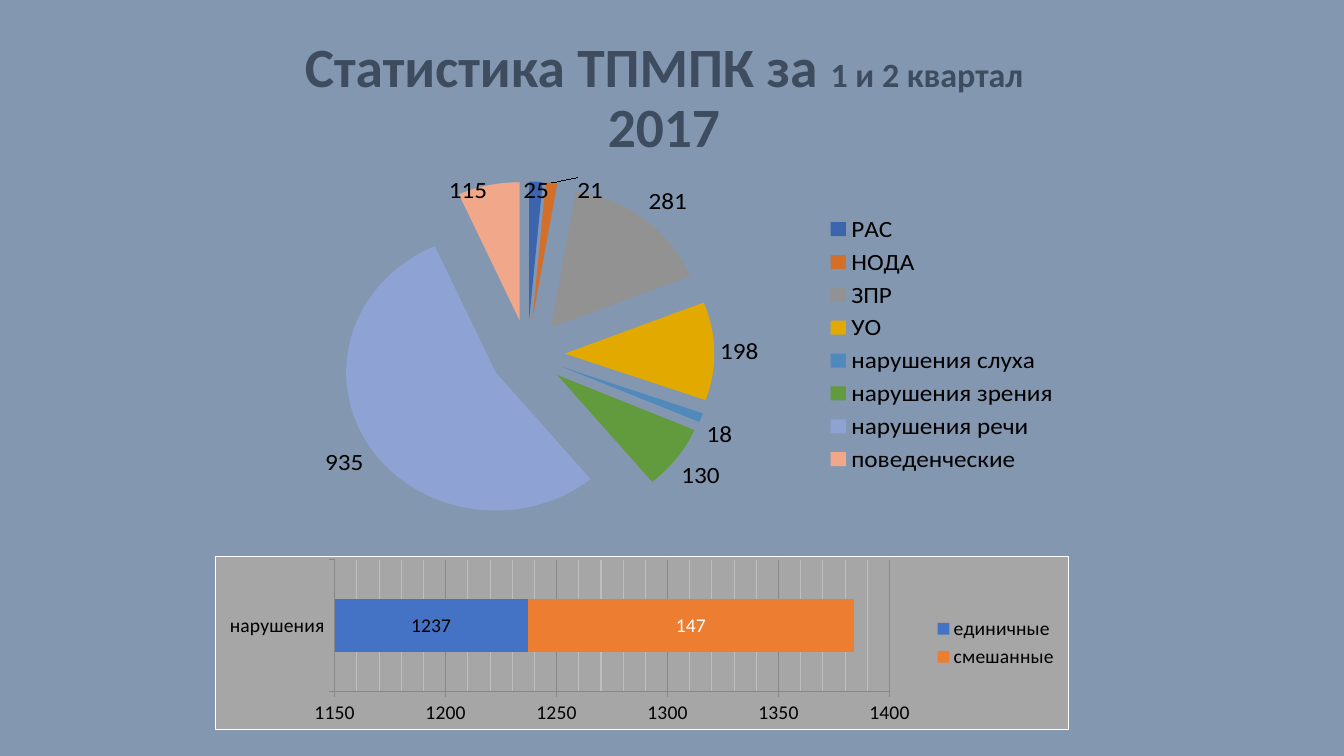
from lxml.etree import SubElement
from pptx import Presentation
from pptx.chart.data import CategoryChartData
from pptx.dml.color import RGBColor
from pptx.enum.chart import XL_CHART_TYPE as ChartType
from pptx.enum.chart import XL_LABEL_POSITION as LabelPosition
from pptx.enum.chart import XL_LEGEND_POSITION as LegendPosition
from pptx.enum.chart import XL_TICK_MARK as TickMark
from pptx.enum.text import MSO_ANCHOR as Anchor
from pptx.enum.text import PP_ALIGN as Align
from pptx.oxml.ns import qn
from pptx.util import Cm, Pt

FONT = "Calibri"
DISORDERS = [
    ("РАС", 25, "3C65AE"),
    ("НОДА", 21, "D16F2B"),
    ("ЗПР", 281, "929292"),
    ("УО", 198, "E2AA00"),
    ("нарушения слуха", 18, "5089BC"),
    ("нарушения зрения", 130, "629A3E"),
    ("нарушения речи", 935, "8FA2D4"),
    ("поведенческие", 115, "F1A78A"),
]
# Name, value, bar colour, label colour
GROUPS = [
    ("единичные", 1237, "4472C4", "000000"),
    ("смешанные", 147, "ED7D31", "FFFFFF"),
]


def paint(target, color):
    """Fill a fill format with a solid hex colour."""
    target.solid()
    target.fore_color.rgb = RGBColor.from_string(color)


def style_font(font, size, color="000000", bold=False):
    font.name, font.size, font.bold = FONT, Pt(size), bold
    font.color.rgb = RGBColor.from_string(color)


def style_line(line, color):
    line.color.rgb = RGBColor.from_string(color)
    line.width = Pt(0.75)


def add_solid_fill(parent, color):
    solid = SubElement(parent, qn("a:solidFill"))
    SubElement(solid, qn("a:srgbClr"), val=color)


def add_outline(parent, color):
    line = SubElement(parent, qn("a:ln"), w=str(Pt(0.75)))
    add_solid_fill(line, color)


def add_layout(parent, index, **fractions):
    """Place a chart part by fractions of the chart area."""
    for old in parent.findall(qn("c:layout")):
        parent.remove(old)
    layout = SubElement(parent, qn("c:layout"))
    manual = SubElement(layout, qn("c:manualLayout"))
    for name, value in fractions.items():
        SubElement(manual, qn(f"c:{name}")).set("val", str(value))
    parent.insert(index, layout)


def place_plot(chart, x, y, w, h):
    area = chart.plots[0]._element.getparent()
    add_layout(area, 0, layoutTarget="inner", xMode="edge", yMode="edge",
               x=x, y=y, w=w, h=h)


def add_title(page, pieces):
    box = page.shapes.add_textbox(Cm(5.94), Cm(0.91), Cm(21.59), Cm(3.18))
    frame = box.text_frame
    frame.word_wrap = True
    frame.vertical_anchor = Anchor.MIDDLE
    frame.margin_left = frame.margin_right = Cm(0.35)
    para = frame.paragraphs[0]
    para.alignment, para.line_spacing = Align.CENTER, 0.9
    for text, size in pieces:
        span = para.add_run()
        span.text = text
        style_font(span.font, size, "3D4C5F", bold=True)


def add_chart(page, kind, place, categories, series, legend_size):
    data = CategoryChartData()
    data.categories = categories
    for name, values in series:
        data.add_series(name, values)
    lengths = [Cm(length) for length in place]
    chart = page.shapes.add_chart(kind, *lengths, data).chart
    chart.has_title = False
    style_font(chart.font, 18)
    chart.has_legend = True
    chart.legend.position = LegendPosition.RIGHT
    chart.legend.include_in_layout = False
    style_font(chart.legend.font, legend_size)
    return chart


def add_disorder_pie(page):
    names, values, colors = zip(*DISORDERS)
    chart = add_chart(page, ChartType.PIE, (5.94, 3.73, 21.01, 9.19),
                      names, [("Series 1", values)], 18)
    place_plot(chart, 0.17, 0.12, 0.36, 0.82)
    plot = chart.plots[0]
    plot.vary_by_categories = True
    series = plot.series[0]

    # Exploded slices
    for index, color in enumerate(colors):
        paint(series.points[index].format.fill, color)
    for slice_xml in series._element.findall(qn("c:dPt")):
        explosion = SubElement(slice_xml, qn("c:explosion"))
        explosion.set("val", "25")
        slice_xml.find(qn("c:spPr")).addprevious(explosion)

    # Value labels, with the second one moved clear of its neighbour
    labels = series.data_labels
    labels.show_value = True
    labels.position = LabelPosition.OUTSIDE_END
    style_font(labels.font, 18)
    series.points[1].data_label.position = LabelPosition.OUTSIDE_END
    label_xml = series._element.find(qn("c:dLbls")).find(qn("c:dLbl"))
    add_layout(label_xml, 1, x=0.03, y=0)


def style_axis(axis):
    axis.major_tick_mark = TickMark.OUTSIDE
    style_font(axis.tick_labels.font, 14)
    style_line(axis.format.line, "878787")


def frame_chart(chart, fill, border):
    """Give the whole chart area a fill and a thin border."""
    area = SubElement(chart._chartSpace, qn("c:spPr"))
    chart._chartSpace.find(qn("c:chart")).addnext(area)
    add_solid_fill(area, fill)
    add_outline(area, border)


def add_group_bar(page):
    chart = add_chart(page, ChartType.BAR_STACKED, (5.41, 14, 21.54, 4.39),
                      ["нарушения"],
                      [(name, [value]) for name, value, *_ in GROUPS], 14)
    place_plot(chart, 0.14, 0.02, 0.65, 0.76)
    frame_chart(chart, "A6A6A6", "FFFFFF")

    # Axes and gridlines
    style_axis(chart.category_axis)
    axis = chart.value_axis
    style_axis(axis)
    axis.minimum_scale, axis.maximum_scale = 1150, 1400
    axis.major_unit, axis.minor_unit = 50, 10
    axis.has_major_gridlines = axis.has_minor_gridlines = True
    style_line(axis.major_gridlines.format.line, "878787")
    minor_grid = axis._element.find(qn("c:minorGridlines"))
    add_outline(SubElement(minor_grid, qn("c:spPr")), "BEBEBE")

    # Stacked bars
    plot = chart.plots[0]
    plot.vary_by_categories = False
    plot.gap_width, plot.overlap = 150, 100
    for series, (_, _, color, label_color) in zip(plot.series, GROUPS):
        paint(series.format.fill, color)
        series.data_labels.show_value = True
        style_font(series.data_labels.font, 14, label_color)


def main():
    deck = Presentation()
    deck.slide_width, deck.slide_height = Cm(33.87), Cm(19.05)
    page = deck.slides.add_slide(deck.slide_layouts[6])
    paint(page.background.fill, "8497B0")
    add_title(page, [("Статистика ТПМПК за ", 39.6),
                     ("1 и 2 квартал ", 24.3),
                     ("2017", 39.6)])
    add_disorder_pie(page)
    add_group_bar(page)
    deck.save("out.pptx")


if __name__ == "__main__":
    main()
